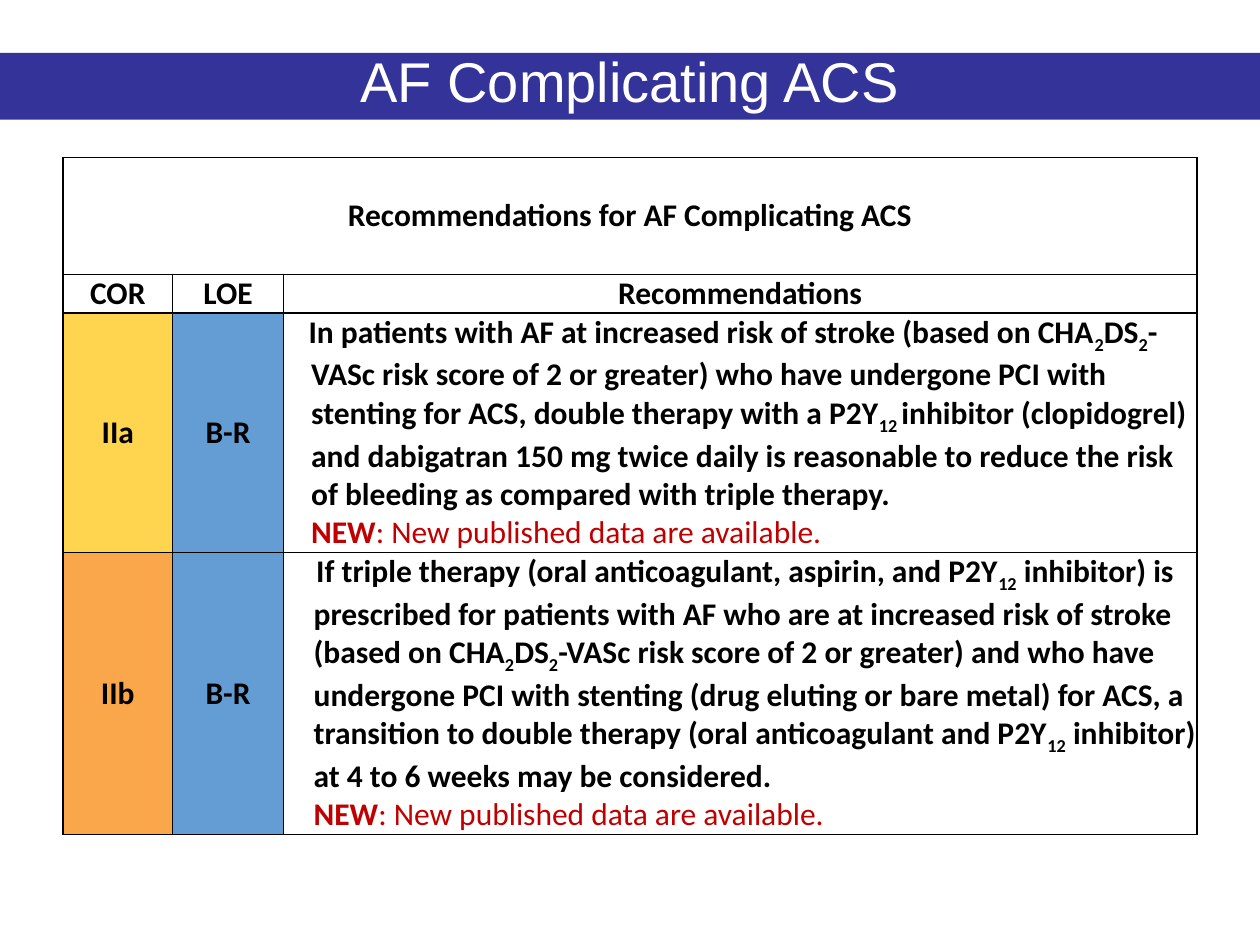
from lxml.etree import SubElement
from pptx import Presentation
from pptx.dml.color import RGBColor
from pptx.enum.text import MSO_ANCHOR as Anchor, MSO_AUTO_SIZE as AutoSize, PP_ALIGN as Align
from pptx.oxml.ns import qn
from pptx.util import Inches, Pt

TITLE = "AF Complicating ACS"
TABLE_TITLE = "Recommendations for AF Complicating ACS"
HEADINGS = ["COR", "LOE", "Recommendations"]
NOTE = ("NEW", ": New published data are available.")
LOE_FILL = "649DD4"
RECOMMENDATIONS = [
    {
        "cor": "IIa", "fill": "FFD54F", "loe": "B-R", "margin": 0.21, "indent": -0.02,
        "text": "In patients with AF at increased risk of stroke (based on CHA~2~DS~2~-VASc risk score "
                "of 2 or greater) who have undergone PCI with stenting for ACS, double therapy with a "
                "P2Y~12 ~inhibitor (clopidogrel) and dabigatran 150 mg twice daily is reasonable to "
                "reduce the risk of bleeding as compared with triple therapy.",
    },
    {
        "cor": "IIb", "fill": "FAA74B", "loe": "B-R", "margin": 0.23, "indent": 0.02,
        "text": "If triple therapy (oral anticoagulant, aspirin, and P2Y~12~ inhibitor) is prescribed "
                "for patients with AF who are at increased risk of stroke (based on CHA~2~DS~2~-VASc "
                "risk score of 2 or greater) and who have undergone PCI with stenting (drug eluting or "
                "bare metal) for ACS, a transition to double therapy (oral anticoagulant and P2Y~12~ "
                "inhibitor) at 4 to 6 weeks may be considered.",
    },
]
COLUMNS = [0.87, 0.88, 7.25]
ROWS = [0.93, 0.3, 1.83, 2.1]


def color(value):
    return RGBColor.from_string(value)


def set_font(font, size, name, value, bold):
    font.size, font.name, font.bold = Pt(size), name, bold
    font.color.rgb = color(value)


def prepare_cell(cell, fill=None):
    cell.margin_left = cell.margin_right = Inches(0.01)
    cell.margin_top = cell.margin_bottom = 0
    properties = cell._tc.get_or_add_tcPr()
    for side in ("a:lnL", "a:lnR", "a:lnT", "a:lnB"):
        line = SubElement(properties, qn(side), w=str(Pt(1)))
        SubElement(SubElement(line, qn("a:solidFill")), qn("a:srgbClr"), val="000000")
    if fill:
        cell.fill.solid()
        cell.fill.fore_color.rgb = color(fill)
    else:
        cell.fill.background()


def write_label(cell, text):
    cell.vertical_anchor = Anchor.MIDDLE
    paragraph = cell.text_frame.paragraphs[0]
    paragraph.text = text
    paragraph.alignment = Align.CENTER
    set_font(paragraph.font, 18, "Calibri", "000000", True)


def set_indent(paragraph, margin, indent):
    properties = paragraph._p.get_or_add_pPr()
    properties.set("marL", str(Inches(margin)))
    properties.set("indent", str(Inches(indent)))


def write_recommendation(cell, item):
    paragraph = cell.text_frame.paragraphs[0]
    set_indent(paragraph, item["margin"], item["indent"])
    for index, part in enumerate(item["text"].split("~")):
        run = paragraph.add_run()
        run.text = part
        set_font(run.font, 18, "Calibri", "000000", True)
        if index % 2:
            run.font._element.set("baseline", "-25000")
    note = cell.text_frame.add_paragraph()
    set_indent(note, item["margin"], 0)
    for part, bold in zip(NOTE, (True, False)):
        run = note.add_run()
        run.text = part
        set_font(run.font, 18, "Calibri", "C00000", bold)


def add_title(slide, width):
    title = slide.shapes.title
    title.left, title.top, title.width, title.height = 0, Inches(0.42), width, Inches(0.53)
    title.fill.solid()
    title.fill.fore_color.rgb = color("333399")
    frame = title.text_frame
    frame.text = TITLE
    frame.auto_size = AutoSize.NONE
    frame.vertical_anchor = Anchor.MIDDLE
    paragraph = frame.paragraphs[0]
    paragraph.alignment = Align.CENTER
    paragraph.line_spacing = 0.8
    set_font(paragraph.font, 32, "Arial", "FFFFFF", False)


def add_recommendations(slide):
    table = slide.shapes.add_table(
        len(ROWS), len(COLUMNS), Inches(0.5), Inches(1.25),
        Inches(sum(COLUMNS)), Inches(sum(ROWS))).table
    table.first_row = table.horz_banding = False
    for column, width in zip(table.columns, COLUMNS):
        column.width = Inches(width)
    for row, height in zip(table.rows, ROWS):
        row.height = Inches(height)
    fills = [[None] * 3] * 2 + [[item["fill"], LOE_FILL, None] for item in RECOMMENDATIONS]
    for row, row_fills in zip(table.rows, fills):
        for cell, fill in zip(row.cells, row_fills):
            prepare_cell(cell, fill)
    table.cell(0, 0).merge(table.cell(0, 2))
    write_label(table.cell(0, 0), TABLE_TITLE)
    for column, heading in enumerate(HEADINGS):
        write_label(table.cell(1, column), heading)
    for row, item in enumerate(RECOMMENDATIONS, 2):
        write_label(table.cell(row, 0), item["cor"])
        write_label(table.cell(row, 1), item["loe"])
        write_recommendation(table.cell(row, 2), item)


def main():
    presentation = Presentation()
    presentation.slide_width, presentation.slide_height = Inches(10), Inches(7.5)
    slide = presentation.slides.add_slide(presentation.slide_layouts[5])
    add_title(slide, presentation.slide_width)
    add_recommendations(slide)
    presentation.save("out.pptx")


if __name__ == "__main__":
    main()
